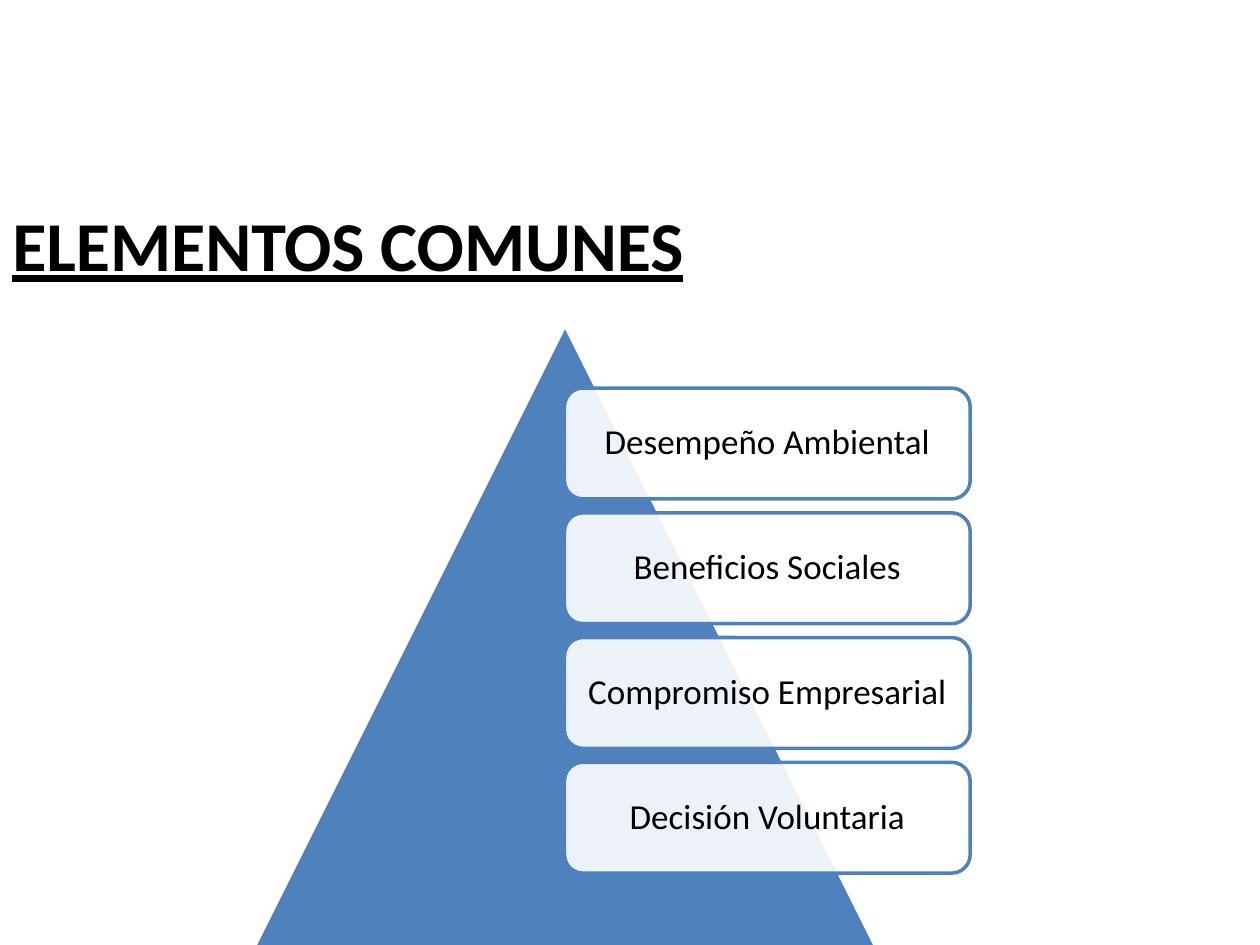
"""Build the slide of common elements: a pyramid with four labelled boxes."""
from pptx import Presentation
from pptx.dml.color import RGBColor
from pptx.enum.shapes import MSO_SHAPE
from pptx.enum.text import MSO_ANCHOR, PP_ALIGN
from pptx.oxml.ns import qn
from pptx.util import Inches, Pt
from lxml.etree import SubElement

BLACK = RGBColor(0x00, 0x00, 0x00)
WHITE = RGBColor(0xFF, 0xFF, 0xFF)
BLUE = RGBColor(0x4F, 0x81, 0xBD)

ELEMENTS = [
    "Desempeño Ambiental",
    "Beneficios Sociales",
    "Compromiso Empresarial",
    "Decisión Voluntaria",
]


class SlideBuilder:
    FONT = "Calibri"
    LINE_WIDTH = Pt(2)

    def __init__(self, slide):
        self.slide = slide

    def set_text(self, frame, text, frame_format, paragraph_format, font_format):
        frame.word_wrap = True
        frame.vertical_anchor = MSO_ANCHOR.MIDDLE
        paragraph = frame.paragraphs[0]
        run = paragraph.add_run()
        run.text = text
        run.font.color.rgb = BLACK
        targets = (
            (frame, frame_format),
            (paragraph, paragraph_format),
            (run.font, {"name": self.FONT, **font_format}),
        )
        for target, values in targets:
            for attribute, value in values.items():
                setattr(target, attribute, value)

    def title(self, text, left, top, width, height):
        heading = self.slide.shapes.add_textbox(left, top, width, height)
        self.set_text(
            heading.text_frame, text, {}, {"alignment": PP_ALIGN.LEFT},
            {"size": Pt(40), "bold": True, "underline": True},
        )

    def shape(self, preset, left, top, width, height, fill, line):
        shape = self.slide.shapes.add_shape(preset, left, top, width, height)
        shape.shadow.inherit = False
        shape.fill.solid()
        shape.fill.fore_color.rgb = fill
        shape.line.color.rgb = line
        shape.line.width = self.LINE_WIDTH
        return shape

    def pyramid(self, left, top, side):
        self.shape(MSO_SHAPE.ISOSCELES_TRIANGLE, left, top, side, side, BLUE, WHITE)

    def label_box(self, text, left, top, width, height, opacity=90):
        box = self.shape(
            MSO_SHAPE.ROUNDED_RECTANGLE, left, top, width, height, WHITE, BLUE
        )
        fill_color = box.element.spPr.find(qn("a:solidFill"))[0]
        SubElement(fill_color, qn("a:alpha"), val=str(opacity * 1000))
        sides = ("left", "right", "top", "bottom")
        self.set_text(
            box.text_frame, text,
            {f"margin_{side}": Inches(0.08) for side in sides},
            {"alignment": PP_ALIGN.CENTER, "line_spacing": 0.9},
            {"size": Pt(20)},
        )


def main():
    presentation = Presentation()
    presentation.slide_width = Inches(10)
    presentation.slide_height = Inches(7.5)
    builder = SlideBuilder(presentation.slides.add_slide(presentation.slide_layouts[6]))

    builder.title("ELEMENTOS COMUNES", Inches(0), Inches(1.31), Inches(9), Inches(1.25))
    builder.pyramid(Inches(2.01), Inches(2.58), Inches(4.95))
    first_top, pitch = 3.08, 0.99
    for row, element in enumerate(ELEMENTS):
        builder.label_box(
            element, Inches(4.48), Inches(first_top + row * pitch),
            Inches(3.22), Inches(0.88),
        )

    presentation.save("out.pptx")


if __name__ == "__main__":
    main()
